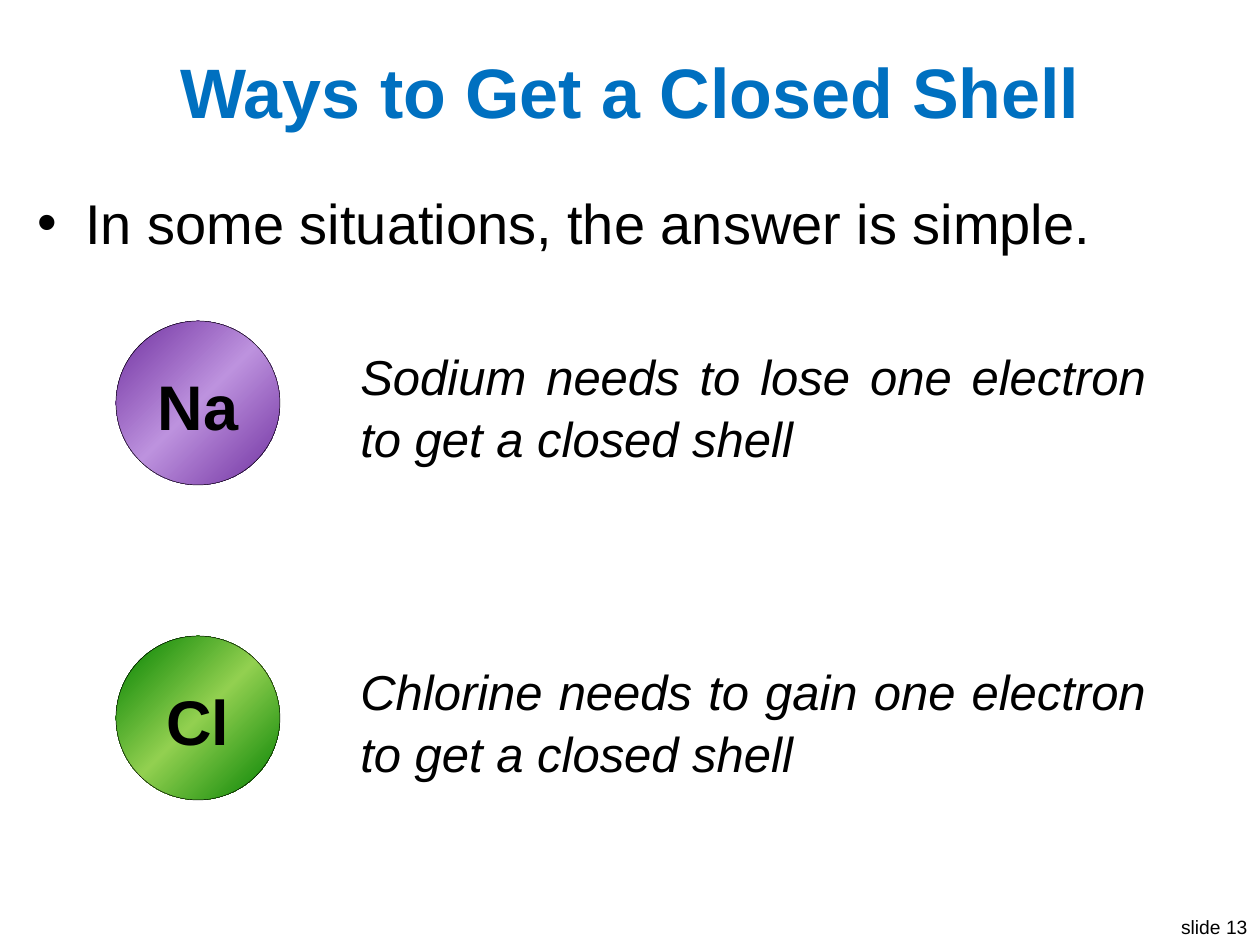
"""Build the slide on how sodium and chlorine reach a closed shell."""
from lxml import etree
from pptx import Presentation
from pptx.dml.color import RGBColor
from pptx.enum.shapes import MSO_SHAPE as SHAPE
from pptx.enum.text import MSO_ANCHOR as ANCHOR, PP_ALIGN as ALIGN
from pptx.oxml import parse_xml
from pptx.oxml.ns import nsdecls, qn
from pptx.util import Pt

TITLE = "Ways to Get a Closed Shell"
POINT = "In some situations, the answer is simple."
FOOTER = "slide 13"
ATOMS = [
    ("Na", "Sodium needs to lose one electron to get a closed shell", "purple", "lilac"),
    ("Cl", "Chlorine needs to gain one electron to get a closed shell", "green", "lime"),
]
COLORS = {
    "title": "0070C0", "black": "000000",
    "purple": "7030A0", "lilac": "BD92DE",
    "green": "008000", "lime": "92D050",
}
ATOM_X, ATOM_Y, ATOM_SIZE, ATOM_STEP = 116, 321, 164, 315
NOTE_X, NOTE_W, NOTE_H = 348, 810, 131
INDENT = 48
SCALE = 914400 / 126


def px(n):
    return round(n * SCALE)


def rgb(name):
    return RGBColor.from_string(COLORS[name])


def write(sp, text, size, align=ALIGN.LEFT, color="black", bold=False, italic=False,
          anchor=ANCHOR.TOP, wrap=True):
    tf = sp.text_frame
    tf.text = text
    tf.word_wrap = wrap
    tf.vertical_anchor = anchor
    p = tf.paragraphs[0]
    p.alignment = align
    p.line_spacing = 1.05
    font = p.runs[0].font
    font.name, font.size = "Arial", Pt(size)
    font.bold, font.italic = bold, italic
    font.color.rgb = rgb(color)
    return p


def add_text(slide, box, text, size, **style):
    return write(slide.shapes.add_textbox(*map(px, box)), text, size, **style)


def add_bullet(p):
    pPr = p._p.get_or_add_pPr()
    pPr.set("marL", str(px(INDENT)))
    pPr.set("indent", str(-px(INDENT)))
    etree.SubElement(pPr, qn("a:buFont")).set("typeface", "Arial")
    etree.SubElement(pPr, qn("a:buChar")).set("char", "•")


def fill_gradient(sp, edge, middle):
    stops = "".join(
        f'<a:gs pos="{pos}000"><a:srgbClr val="{COLORS[name]}"/></a:gs>'
        for pos, name in ((0, edge), (50, middle), (100, edge)))
    sp._element.spPr.find(qn("a:prstGeom")).addnext(parse_xml(
        f'<a:gradFill {nsdecls("a")}><a:gsLst>{stops}</a:gsLst>'
        '<a:path path="circle"><a:fillToRect l="100000" t="100000"/></a:path></a:gradFill>'))


def add_atom(slide, y, symbol, edge, middle):
    sp = slide.shapes.add_shape(SHAPE.OVAL, *map(px, (ATOM_X, y, ATOM_SIZE, ATOM_SIZE)))
    sp.shadow.inherit = False
    fill_gradient(sp, edge, middle)
    sp.line.color.rgb = rgb("black")
    sp.line.width = Pt(0.25)
    tf = sp.text_frame
    tf.margin_left = tf.margin_top = tf.margin_right = tf.margin_bottom = 0
    write(sp, symbol, 36, align=ALIGN.CENTER, bold=True, anchor=ANCHOR.MIDDLE)


def main():
    prs = Presentation()
    prs.slide_width, prs.slide_height = px(1260), px(945)
    slide = prs.slides.add_slide(prs.slide_layouts[5])

    title = slide.shapes.title
    title.left, title.top, title.width, title.height = map(px, (25, 38, 1210, 101))
    write(title, TITLE, 40, align=ALIGN.CENTER, color="title", bold=True, anchor=ANCHOR.MIDDLE)

    add_bullet(add_text(slide, (25, 179, 1210, 81), POINT, 32))

    for i, (symbol, note, edge, middle) in enumerate(ATOMS):
        y = ATOM_Y + i * ATOM_STEP
        add_atom(slide, y, symbol, edge, middle)
        note_y = y + (ATOM_SIZE - NOTE_H) / 2
        add_text(slide, (NOTE_X, note_y, NOTE_W, NOTE_H), note, 28,
                 align=ALIGN.JUSTIFY, italic=True)

    add_text(slide, (1165, 908, 95, 37), FOOTER, 11, align=ALIGN.RIGHT, wrap=False)
    prs.save("out.pptx")


if __name__ == "__main__":
    main()
